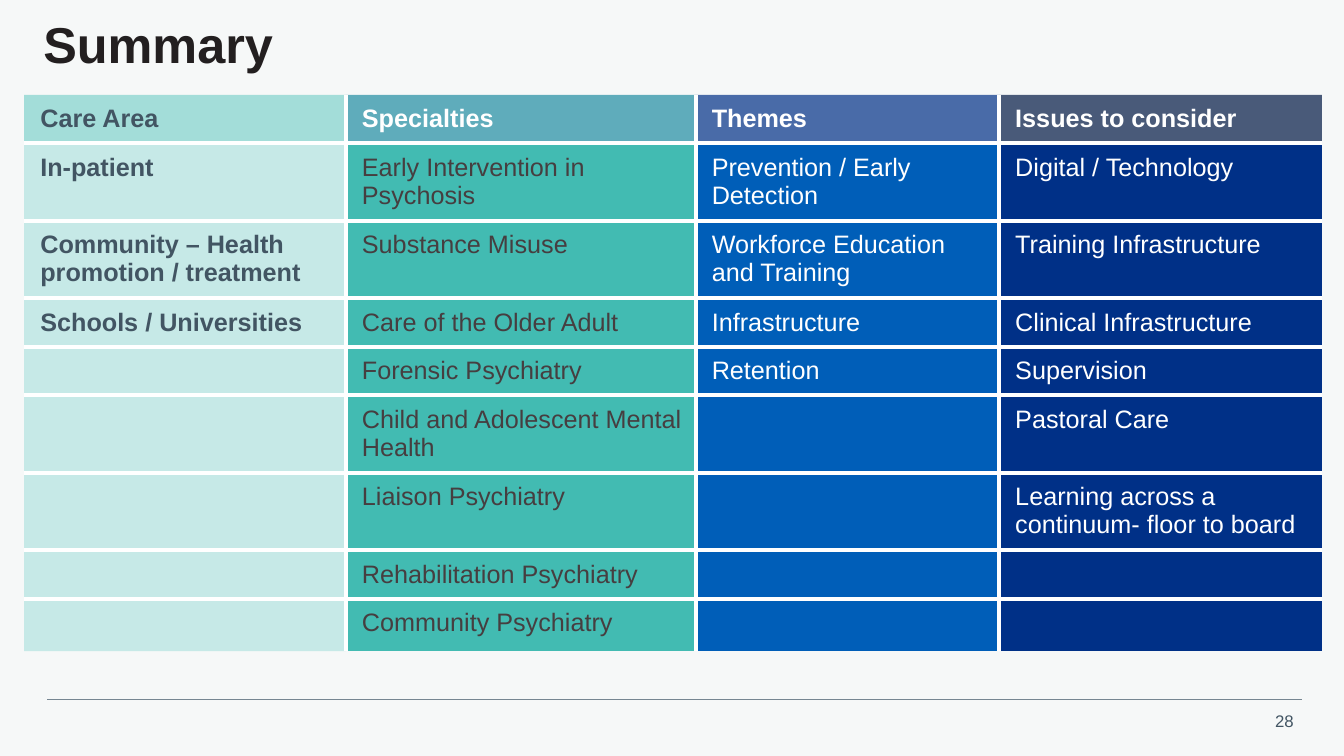
from lxml import etree
from pptx import Presentation
from pptx import util as u
from pptx.dml.color import RGBColor
from pptx.enum import shapes, text
from pptx.oxml import ns

TITLE = "Summary"
PAGE_NUMBER = "28"
COLUMNS = [
    {"width": 3.19, "header": ("Care Area", "80D2CC", "425563"),
     "fill": "B3E4E0", "alpha": 70, "color": "425563", "bold": True,
     "items": ["In-patient", "Community – Health promotion / treatment",
               "Schools / Universities"]},
    {"width": 3.47, "header": ("Specialties", "208CA2", "FFFFFF"),
     "fill": "42BBB2", "alpha": 100, "color": "463E40", "bold": False,
     "items": ["Early Intervention in Psychosis", "Substance Misuse",
               "Care of the Older Adult", "Forensic Psychiatry",
               "Child and Adolescent Mental Health", "Liaison Psychiatry",
               "Rehabilitation Psychiatry", "Community Psychiatry"]},
    {"width": 3.01, "header": ("Themes", "003087", "FFFFFF"),
     "fill": "005EB8", "alpha": 100, "color": "FFFFFF", "bold": False,
     "items": ["Prevention / Early Detection", "Workforce Education and Training",
               "Infrastructure", "Retention"]},
    {"width": 3.2, "header": ("Issues to consider", "001844", "FFFFFF"),
     "fill": "003087", "alpha": 100, "color": "FFFFFF", "bold": False,
     "items": ["Digital / Technology", "Training Infrastructure",
               "Clinical Infrastructure", "Supervision", "Pastoral Care",
               "Learning across a continuum- floor to board"]},
]
ROW_HEIGHTS = [0.48, 0.77, 0.77, 0.48, 0.48, 0.77, 0.77, 0.48, 0.52]
HEADER_ALPHA = 70
CELL_MARGINS = {"margin_left": 0.16, "margin_right": 0.1,
                "margin_top": 0.1, "margin_bottom": 0.1}


def set_values(target, values):
    for name, value in values.items():
        setattr(target, name, value)


def place(shape, left, top, width, height):
    set_values(shape, {"left": u.Inches(left), "top": u.Inches(top),
                       "width": u.Inches(width), "height": u.Inches(height)})


def set_font(paragraph, size, color, bold=False):
    set_values(paragraph.font, {"name": "Arial", "size": u.Pt(size), "bold": bold})
    paragraph.font.color.rgb = RGBColor.from_string(color)


def set_fill(fill, color, alpha=100):
    fill.solid()
    fill.fore_color.rgb = RGBColor.from_string(color)
    if alpha < 100:
        color_element = fill._xPr.find(".//" + ns.qn("a:srgbClr"))
        etree.SubElement(color_element, ns.qn("a:alpha"), val=str(alpha * 1000))


def set_borders(cell, visible_sides):
    properties = cell._tc.get_or_add_tcPr()
    for index, side in enumerate("LRTB"):
        line = etree.Element(ns.qn("a:ln" + side), w=str(u.Pt(3)))
        if side in visible_sides:
            solid = etree.SubElement(line, ns.qn("a:solidFill"))
            etree.SubElement(solid, ns.qn("a:srgbClr"), val="FFFFFF")
        else:
            etree.SubElement(line, ns.qn("a:noFill"))
        properties.insert(index, line)


def fill_cell(cell, wording, fill, alpha, color, bold):
    set_values(cell, {name: u.Inches(value) for name, value in CELL_MARGINS.items()})
    cell.vertical_anchor = text.MSO_ANCHOR.TOP
    cell.text = wording
    set_font(cell.text_frame.paragraphs[0], 18, color, bold)
    set_fill(cell.fill, fill, alpha)


def add_title(slide):
    title = slide.shapes.title
    place(title, 0.43, -0.01, 12.47, 0.95)
    frame = title.text_frame
    set_values(frame, {"margin_left": 0, "margin_top": 0, "margin_right": 0,
                       "margin_bottom": 0, "word_wrap": True,
                       "vertical_anchor": text.MSO_ANCHOR.MIDDLE})
    frame.text = TITLE
    paragraph = frame.paragraphs[0]
    set_values(paragraph, {"alignment": text.PP_ALIGN.LEFT, "line_spacing": 0.9})
    set_font(paragraph, 36, "231F20", True)


def add_footer(slide):
    rule = slide.shapes.add_connector(
        shapes.MSO_CONNECTOR.STRAIGHT, u.Inches(0.47), u.Inches(6.94),
        u.Inches(12.91), u.Inches(6.94))
    rule.line.width = u.Pt(0.5)
    rule.line.color.rgb = RGBColor.from_string("768692")
    etree.SubElement(rule._element.spPr, ns.qn("a:effectLst"))
    number = slide.shapes.add_textbox(
        u.Inches(12.52), u.Inches(7), u.Inches(0.41), u.Inches(0.3))
    number.text_frame.word_wrap = False
    number.text_frame.text = PAGE_NUMBER
    paragraph = number.text_frame.paragraphs[0]
    paragraph.alignment = text.PP_ALIGN.RIGHT
    set_font(paragraph, 12, "425563")


def add_summary_table(slide):
    row_count, column_count = len(ROW_HEIGHTS), len(COLUMNS)
    table = slide.shapes.add_table(
        row_count, column_count, u.Inches(0.24), u.Inches(0.94),
        u.Inches(sum(column["width"] for column in COLUMNS)),
        u.Inches(sum(ROW_HEIGHTS))).table
    set_values(table, {"first_row": False, "horz_banding": False})
    for row, height in zip(table.rows, ROW_HEIGHTS):
        row.height = u.Inches(height)
    for column_index, column in enumerate(COLUMNS):
        table.columns[column_index].width = u.Inches(column["width"])
        header, header_fill, header_color = column["header"]
        for row_index in range(row_count):
            cell = table.cell(row_index, column_index)
            if row_index == 0:
                fill_cell(cell, header, header_fill, HEADER_ALPHA, header_color, True)
            else:
                items = column["items"]
                wording = items[row_index - 1] if row_index <= len(items) else ""
                fill_cell(cell, wording, column["fill"], column["alpha"],
                          column["color"], column["bold"])
            inner = {"L": column_index > 0, "R": column_index < column_count - 1,
                     "T": row_index > 0, "B": row_index < row_count - 1}
            set_borders(cell, [side for side in inner if inner[side]])


def main():
    presentation = Presentation()
    set_values(presentation, {"slide_width": u.Inches(13.33),
                              "slide_height": u.Inches(7.5)})
    slide = presentation.slides.add_slide(presentation.slide_layouts[5])
    set_fill(slide.background.fill, "F6F8F8")
    add_title(slide)
    add_summary_table(slide)
    add_footer(slide)
    presentation.save("out.pptx")


if __name__ == "__main__":
    main()
